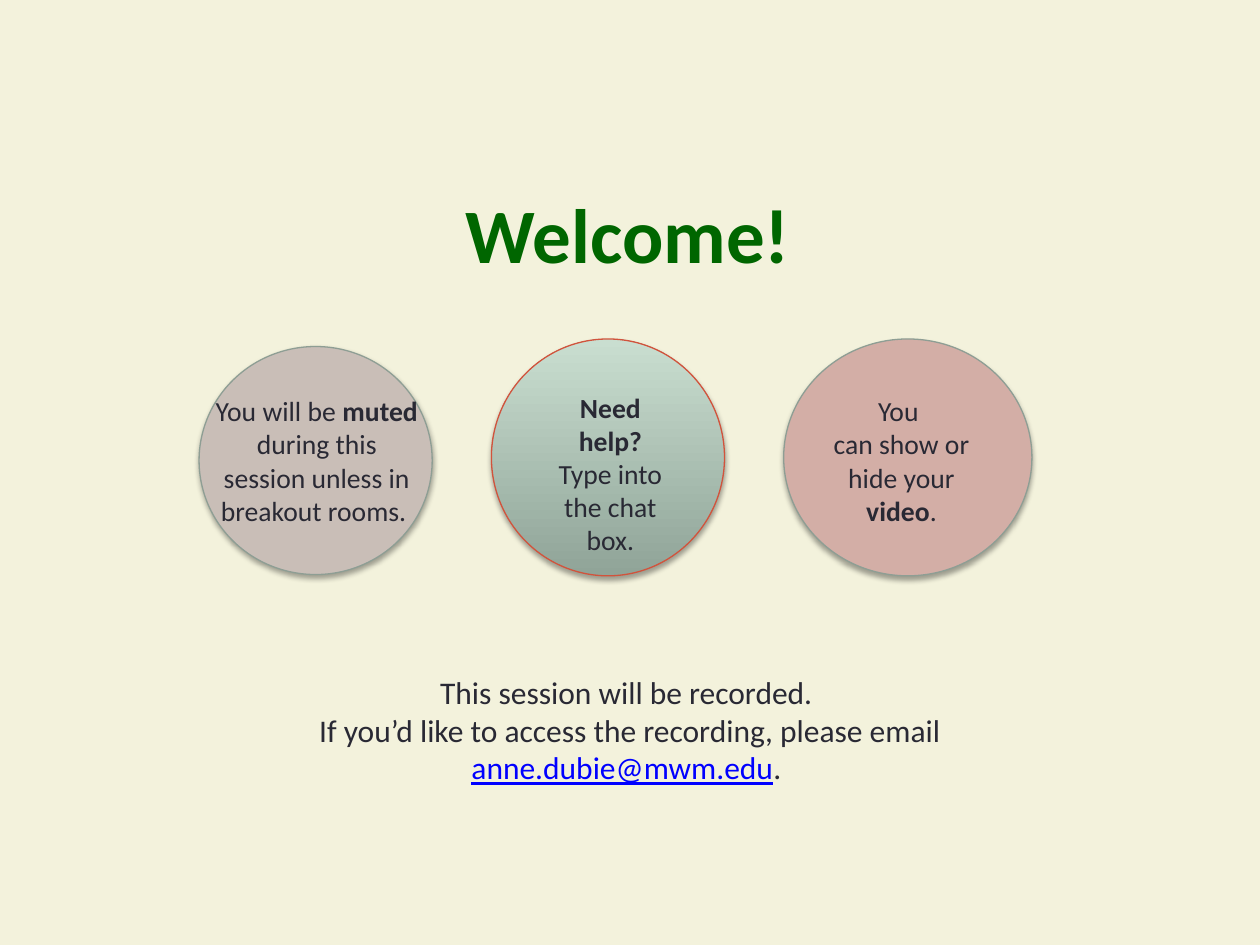
"""Build a welcome slide with three session tips in circles."""
from dataclasses import dataclass

from lxml.etree import SubElement
from pptx import Presentation
from pptx.dml.color import RGBColor
from pptx.enum.shapes import MSO_SHAPE
from pptx.enum.text import MSO_ANCHOR, PP_ALIGN
from pptx.oxml.ns import qn
from pptx.util import Inches, Pt

CREAM = RGBColor(0xF3, 0xF2, 0xDC)
GREEN = RGBColor(0x00, 0x66, 0x00)
INK = RGBColor(0x29, 0x29, 0x34)
LINK = RGBColor(0x00, 0x00, 0xFF)
SAGE = RGBColor(0x8E, 0x9E, 0x94)
RED = RGBColor(0xD2, 0x53, 0x3C)
TAUPE = RGBColor(0xC9, 0xBE, 0xB7)
ROSE = RGBColor(0xD3, 0xAE, 0xA6)
DARK_MINT = RGBColor(0x90, 0xA4, 0x98)
LIGHT_MINT = RGBColor(0xC9, 0xDE, 0xD0)
FONT = "Calibri"


@dataclass(frozen=True)
class Box:
    left: float
    top: float
    width: float
    height: float

    def emu(self) -> list:
        return [Inches(v) for v in (self.left, self.top, self.width, self.height)]


@dataclass(frozen=True)
class Span:
    text: str
    bold: bool = False
    link: bool = False


@dataclass(frozen=True)
class Tip:
    circle: Box
    label: Box
    fills: tuple
    line: RGBColor
    paragraphs: tuple


TIPS = (
    Tip(Box(3.9, 2.69, 1.85, 1.88), Box(4.23, 3.05, 1.23, 1.43),
        (DARK_MINT, LIGHT_MINT), RED,
        ((Span("Need help?", bold=True),), (Span("Type into the chat box."),))),
    Tip(Box(1.58, 2.75, 1.85, 1.81), Box(1.61, 3.08, 1.81, 1.16),
        (TAUPE,), SAGE,
        ((Span("You will be "), Span("muted", bold=True),
          Span(" during this session unless in breakout rooms. ")),)),
    Tip(Box(6.22, 2.69, 1.97, 1.88), Box(6.41, 3.08, 1.49, 1.16),
        (ROSE,), SAGE,
        ((Span("You "),),
         (Span("can show or hide your "), Span("video", bold=True), Span(".")))),
)
NOTICE = (
    (Span("This session will be recorded. "),),
    (Span("If you’d like to access the recording, please email "),
     Span("anne.dubie@mwm.edu", link=True), Span(". ")),
)


def add_text(slide, box: Box, paragraphs: tuple, size: float) -> None:
    tf = slide.shapes.add_textbox(*box.emu()).text_frame
    tf.word_wrap = True
    for i, spans in enumerate(paragraphs):
        p = tf.add_paragraph() if i else tf.paragraphs[0]
        p.alignment = PP_ALIGN.CENTER
        for span in spans:
            r = p.add_run()
            r.text = span.text
            r.font.name, r.font.size = FONT, Pt(size)
            r.font.bold, r.font.underline = span.bold, span.link
            r.font.color.rgb = LINK if span.link else INK


def add_shadow(sp) -> None:
    sp.shadow.inherit = False
    effects = sp._element.spPr.find(qn("a:effectLst"))
    shadow = SubElement(effects, qn("a:outerShdw"), blurRad=str(Pt(3.1)),
                        dist=str(Pt(1.8)), dir="5400000", rotWithShape="0")
    color = SubElement(shadow, qn("a:srgbClr"), val="000000")
    SubElement(color, qn("a:alpha"), val="35000")


def add_tip(slide, tip: Tip) -> None:
    sp = slide.shapes.add_shape(MSO_SHAPE.OVAL, *tip.circle.emu())
    if len(tip.fills) > 1:
        sp.fill.gradient()
        sp.fill.gradient_angle = 90
        for stop, color in zip(sp.fill.gradient_stops, tip.fills):
            stop.color.rgb = color
    else:
        sp.fill.solid()
        sp.fill.fore_color.rgb = tip.fills[0]
    sp.line.color.rgb = tip.line
    sp.line.width = Pt(0.75)
    add_shadow(sp)
    add_text(slide, tip.label, tip.paragraphs, 15.8)


def add_title(slide, text: str, box: Box) -> None:
    title = slide.shapes.title
    title.left, title.top, title.width, title.height = box.emu()
    tf = title.text_frame
    tf.text = text
    tf.vertical_anchor = MSO_ANCHOR.MIDDLE
    p = tf.paragraphs[0]
    p.alignment = PP_ALIGN.CENTER
    font = p.runs[0].font
    font.name, font.size, font.bold = FONT, Pt(44), True
    font.color.rgb = GREEN


def main() -> None:
    prs = Presentation()
    prs.slide_width, prs.slide_height = Inches(10), Inches(7.5)
    s = prs.slides.add_slide(prs.slide_layouts[5])
    s.background.fill.solid()
    s.background.fill.fore_color.rgb = CREAM
    add_title(s, "Welcome!", Box(1.61, 1.38, 6.75, 0.94))
    for tip in TIPS:
        add_tip(s, tip)
    add_text(s, Box(1.25, 5.29, 7.5, 1.01), NOTICE, 18)
    prs.save("out.pptx")


if __name__ == "__main__":
    main()
